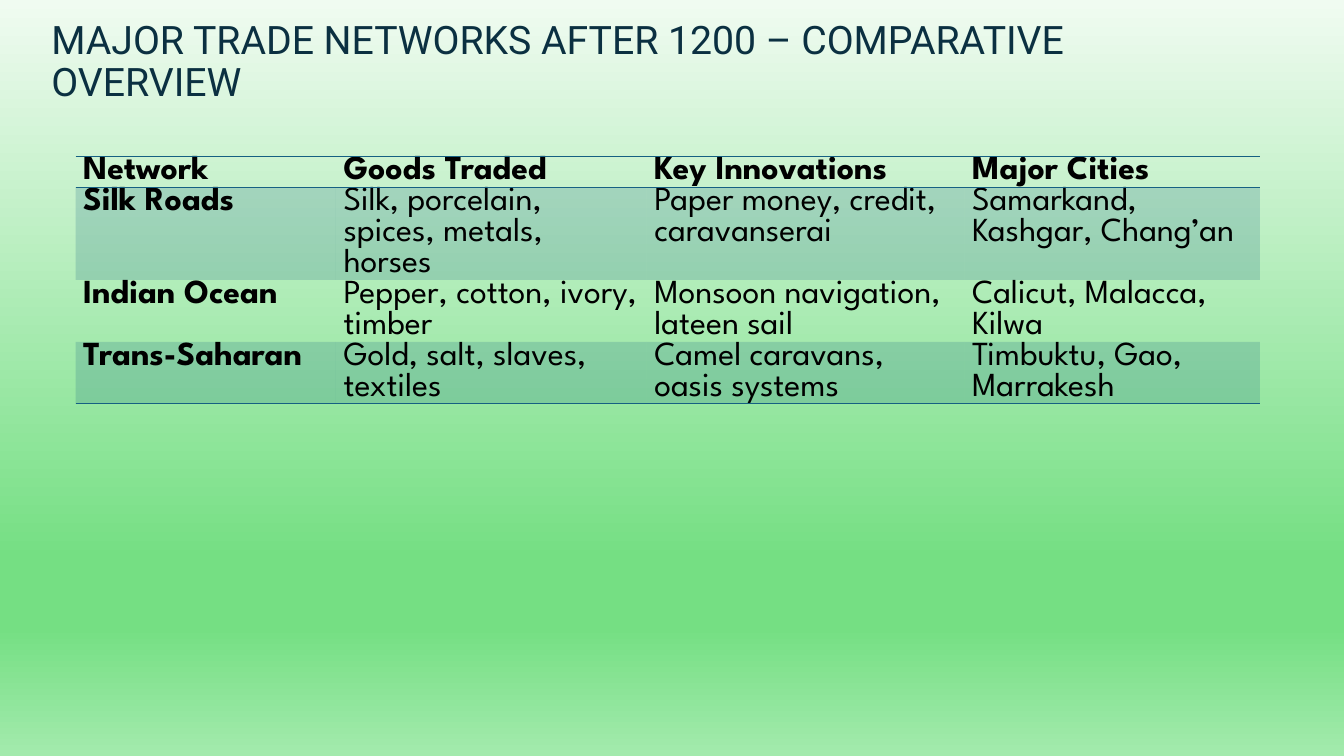
from lxml.etree import SubElement
from pptx import Presentation
from pptx.dml.color import RGBColor
from pptx.enum.text import MSO_ANCHOR, MSO_AUTO_SIZE, PP_ALIGN
from pptx.oxml.ns import qn
from pptx.util import Pt

BOTTOM = MSO_ANCHOR.BOTTOM
TOP = MSO_ANCHOR.TOP
LEFT = PP_ALIGN.LEFT
NO_FIT = MSO_AUTO_SIZE.NONE
TITLE_ONLY = 5
PLAIN_TABLE_STYLE = "{2D5ABB26-0587-4C30-8999-92F81FD0307C}"

TITLE_FONT = "Roboto"
TABLE_FONT = "League Spartan"
NAVY, BLACK, BLUE = "0B3041", "000000", "156082"
BACKGROUND_STOPS = [(0, "F0FBF1"), (74, "75DF83"), (83, "75DF83"), (100, "A3EAAD")]
BAND_OPACITY = 20
LINE_HEIGHT = 22
COLUMN_WIDTHS = [186, 222, 227, 211]
ROW_LINES = [1, 3, 2, 2]

NETWORKS = [
    ["Network", "Goods Traded", "Key Innovations", "Major Cities"],
    ["Silk Roads", "Silk, porcelain, spices, metals, horses",
     "Paper money, credit, caravanserai", "Samarkand, Kashgar, Chang’an"],
    ["Indian Ocean", "Pepper, cotton, ivory, timber",
     "Monsoon navigation, lateen sail", "Calicut, Malacca, Kilwa"],
    ["Trans-Saharan", "Gold, salt, slaves, textiles",
     "Camel caravans, oasis systems", "Timbuktu, Gao, Marrakesh"],
]


def color(value):
    """Turn a hex string into a colour."""
    return RGBColor.from_string(value)


def add_span(para, text, font, size, ink, bold=False):
    """Add one formatted run to a paragraph."""
    span = para.add_run()
    span.text = text
    span.font.name = font
    span.font.size = Pt(size)
    span.font.bold = bold
    span.font.color.rgb = color(ink)


def paint_background(page):
    """Fill the page with the vertical green gradient."""
    fill = page.background.fill
    fill.gradient()
    fill.gradient_angle = 270
    stops = page.element.find(".//" + qn("a:gsLst"))
    for stop in list(stops):
        stops.remove(stop)
    for position, shade in BACKGROUND_STOPS:
        stop = SubElement(stops, qn("a:gs"), pos=str(position * 1000))
        SubElement(stop, qn("a:srgbClr"), val=str(color(shade)))


def add_title(page, text, left, top, width, height):
    """Place the slide title in the given box."""
    title = page.shapes.title
    title.left, title.top = Pt(left), Pt(top)
    title.width, title.height = Pt(width), Pt(height)
    frame = title.text_frame
    frame.word_wrap = True
    frame.auto_size = NO_FIT
    frame.vertical_anchor = BOTTOM
    para = frame.paragraphs[0]
    para.alignment = LEFT
    para.line_spacing = 0.9
    add_span(para, text, TITLE_FONT, 28, NAVY)


def add_rule(cell, edge):
    """Draw a thin blue line on one edge of a cell."""
    line = SubElement(cell._tc.get_or_add_tcPr(), qn("a:" + edge), w=str(Pt(1)))
    SubElement(SubElement(line, qn("a:solidFill")), qn("a:srgbClr"), val=str(color(BLUE)))


def fill_cell(cell, banded):
    """Give a cell the translucent band or no fill."""
    if not banded:
        cell.fill.background()
        return
    cell.fill.solid()
    cell.fill.fore_color.rgb = color(BLUE)
    shade = cell._tc.get_or_add_tcPr().find(qn("a:solidFill"))[0]
    SubElement(shade, qn("a:alpha"), val=str(BAND_OPACITY * 1000))


def add_network_table(page, left, top, width, height):
    """Place the comparison table in the given box."""
    rows, columns = len(NETWORKS), len(COLUMN_WIDTHS)
    table = page.shapes.add_table(
        rows, columns, Pt(left), Pt(top), Pt(width), Pt(height)).table
    table._tbl.tblPr.find(qn("a:tableStyleId")).text = PLAIN_TABLE_STYLE
    table.horz_banding = False
    for column, share in zip(table.columns, COLUMN_WIDTHS):
        column.width = Pt(width * share / sum(COLUMN_WIDTHS))
    for row, lines in zip(table.rows, ROW_LINES):
        row.height = Pt(height * lines / sum(ROW_LINES))
    for i, texts in enumerate(NETWORKS):
        for j, text in enumerate(texts):
            cell = table.cell(i, j)
            cell.margin_left = cell.margin_right = Pt(5.4)
            cell.margin_top = cell.margin_bottom = Pt(0)
            cell.vertical_anchor = TOP
            if i == 0:
                add_rule(cell, "lnT")
            if i in (0, rows - 1):
                add_rule(cell, "lnB")
            fill_cell(cell, banded=i % 2 == 1)
            para = cell.text_frame.paragraphs[0]
            para.alignment = LEFT
            add_span(para, text, TABLE_FONT, 24, BLACK, bold=i == 0 or j == 0)


def main():
    """Build and save the deck."""
    deck = Presentation()
    deck.slide_width, deck.slide_height = Pt(960), Pt(540)
    page = deck.slides.add_slide(deck.slide_layouts[TITLE_ONLY])
    paint_background(page)
    add_title(page, "MAJOR TRADE NETWORKS AFTER 1200 – COMPARATIVE OVERVIEW",
              29.5, 18.7, 858, 60)
    add_network_table(page, 54, 111.6, sum(COLUMN_WIDTHS), LINE_HEIGHT * sum(ROW_LINES))
    deck.save("out.pptx")


if __name__ == "__main__":
    main()
